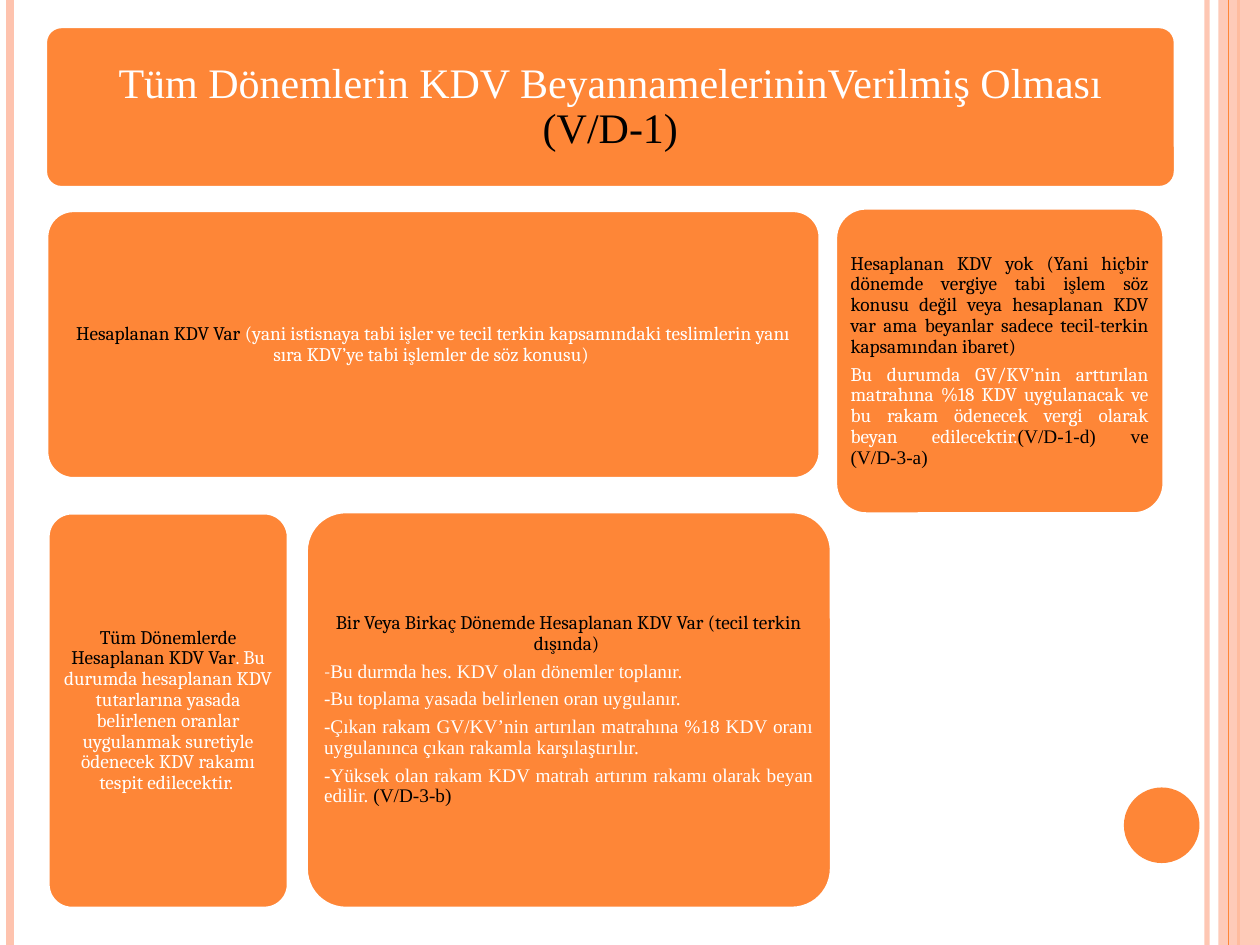
from lxml import etree
from pptx import Presentation
from pptx.dml.color import RGBColor
from pptx.enum.shapes import MSO_CONNECTOR, MSO_SHAPE
from pptx.enum.text import MSO_ANCHOR, PP_ALIGN
from pptx.oxml.ns import qn
from pptx.util import Inches, Pt

LINE = MSO_CONNECTOR.STRAIGHT
RECT, OVAL, ROUND = MSO_SHAPE.RECTANGLE, MSO_SHAPE.OVAL, MSO_SHAPE.ROUNDED_RECTANGLE
MID = MSO_ANCHOR.MIDDLE
CENTER, JUST = PP_ALIGN.CENTER, PP_ALIGN.JUSTIFY
ORANGE, PEACH, WHITE, BLACK = "FE8637", "FEC3AE", "FFFFFF", "000000"
SERIF, BODY = "Times New Roman", "Cambria"


def color(code):
    return RGBColor.from_string(code)


def fade(part, alpha):
    node = part._element.spPr.find(".//" + qn("a:srgbClr"))
    etree.SubElement(node, qn("a:alpha")).set("val", str(alpha * 1000))


def add_rule(slide, x, code, width, alpha=100):
    rule = slide.shapes.add_connector(LINE, Inches(x), 0, Inches(x), Inches(7.5))
    rule.line.color.rgb = color(code)
    rule.line.width = Pt(width)
    etree.SubElement(rule._element.spPr, qn("a:effectLst"))
    if alpha < 100:
        fade(rule, alpha)


def add_block(slide, kind, box, code):
    block = slide.shapes.add_shape(kind, *[Inches(v) for v in box])
    block.shadow.inherit = False
    block.fill.solid()
    block.fill.fore_color.rgb = color(code)
    block.line.fill.background()
    return block


def add_card(slide, box, paras, size=11, inset=0.05):
    card = add_block(slide, ROUND, box, ORANGE)
    card.adjustments[0] = 0.1
    card.line.color.rgb = color(WHITE)
    card.line.width = Pt(2)
    frame = card.text_frame
    frame.word_wrap = True
    frame.vertical_anchor = MID
    frame.margin_left = frame.margin_right = Inches(inset)
    frame.margin_top = frame.margin_bottom = Inches(inset)
    for i, (align, runs) in enumerate(paras):
        para = frame.add_paragraph() if i else frame.paragraphs[0]
        para.alignment = align
        para.line_spacing = 0.9
        para.space_after = Pt(round(size * 0.35))
        para.font.size = Pt(size)
        fonts = {font for _, _, font in runs}
        if len(fonts) == 1:
            para.font.name = runs[0][2]
        for text, code, font in runs:
            run = para.add_run()
            run.text = text
            run.font.color.rgb = color(code)
            if len(fonts) > 1:
                run.font.name = font


def add_frame(slide):
    add_rule(slide, 9.58, PEACH, 3, 93)
    add_rule(slide, 0.08, PEACH, 4.5)
    add_rule(slide, 9.83, ORANGE, 1.5)
    fade(add_block(slide, RECT, (9.67, 0, 0.33, 7.5), PEACH), 87)
    add_rule(slide, 9.75, ORANGE, 0.75)
    add_block(slide, OVAL, (8.92, 6.25, 0.6, 0.6), ORANGE)


def main():
    deck = Presentation()
    deck.slide_width, deck.slide_height = Inches(10), Inches(7.5)
    slide = deck.slides.add_slide(deck.slide_layouts[6])
    add_frame(slide)
    add_card(slide, (0.36, 0.21, 8.97, 1.28), [
        (CENTER, [("Tüm Dönemlerin KDV BeyannamelerininVerilmiş Olması ", WHITE, SERIF),
                  ("(V/D-1)", BLACK, SERIF)]),
    ], 24, 0.1)
    add_card(slide, (0.37, 1.67, 6.14, 2.13), [
        (CENTER, [("Hesaplanan KDV Var", BLACK, BODY),
                  (" (yani istisnaya tabi işler ve tecil terkin kapsamındaki teslimlerin "
                   "yanı sıra KDV’ye tabi işlemler de söz konusu) ", WHITE, BODY)]),
    ])
    add_card(slide, (0.38, 4.07, 1.91, 3.14), [
        (CENTER, [("Tüm Dönemlerde Hesaplanan KDV Var", BLACK, BODY),
                  (". Bu durumda hesaplanan KDV tutarlarına yasada belirlenen oranlar "
                   "uygulanmak suretiyle ödenecek KDV rakamı tespit edilecektir. ", WHITE, BODY)]),
    ])
    add_card(slide, (2.43, 4.06, 4.17, 3.15), [
        (CENTER, [("Bir Veya Birkaç Dönemde Hesaplanan KDV Var (tecil terkin dışında) ",
                   BLACK, BODY)]),
        (JUST, [("-", WHITE, BODY),
                ("Bu durmda hes. KDV olan dönemler toplanır.", WHITE, SERIF)]),
        (JUST, [("-Bu toplama yasada belirlenen oran uygulanır.", WHITE, SERIF)]),
        (JUST, [("-Çıkan rakam GV/KV’nin artırılan matrahına %18 KDV oranı uygulanınca "
                 "çıkan rakamla karşılaştırılır.", WHITE, SERIF)]),
        (JUST, [("-Yüksek olan rakam KDV matrah artırım rakamı olarak beyan edilir. ",
                 WHITE, SERIF),
                ("(V/D-3-b)", BLACK, SERIF)]),
    ])
    add_card(slide, (6.63, 1.65, 2.61, 2.43), [
        (JUST, [("Hesaplanan KDV yok (Yani hiçbir dönemde vergiye tabi işlem söz konusu "
                 "değil veya hesaplanan KDV var ama beyanlar sadece tecil-terkin "
                 "kapsamından ibaret)", BLACK, BODY)]),
        (JUST, [("Bu durumda GV/KV’nin arttırılan matrahına %18 KDV uygulanacak ve bu "
                 "rakam ödenecek vergi olarak beyan edilecektir.", WHITE, BODY),
                ("(V/D-1-d) ve (V/D-3-a)", BLACK, SERIF)]),
    ])
    deck.save("out.pptx")


if __name__ == "__main__":
    main()
